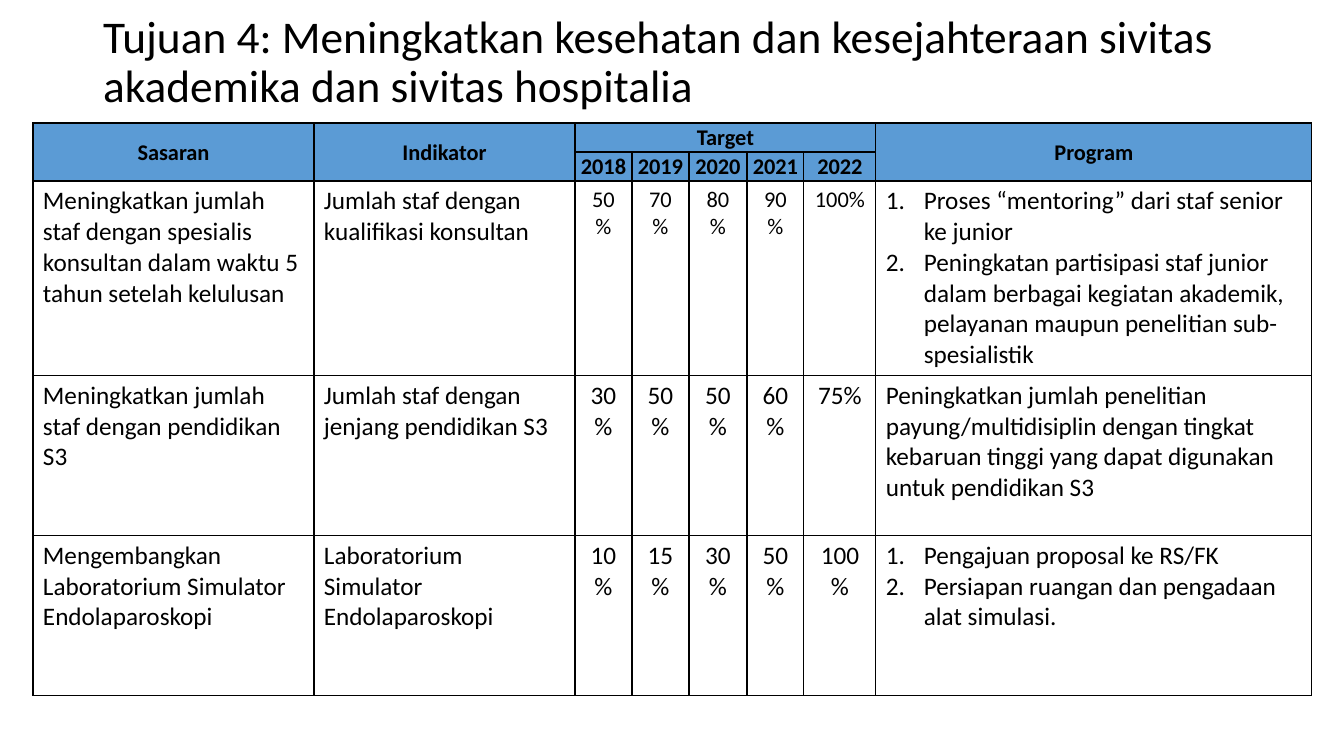
from dataclasses import dataclass

from lxml import etree
from pptx import Presentation
from pptx.dml.color import RGBColor
from pptx.enum.text import MSO_ANCHOR, MSO_AUTO_SIZE, PP_ALIGN
from pptx.oxml.ns import qn
from pptx.util import Emu, Pt

LEFT, CENTER = PP_ALIGN.LEFT, PP_ALIGN.CENTER
TOP, MIDDLE = MSO_ANCHOR.TOP, MSO_ANCHOR.MIDDLE
NO_AUTOFIT = MSO_AUTO_SIZE.NONE

COLORS = {"text": "000000", "header": "5B9BD5", "border": "000000"}
FONT = "Calibri"
PX_PER_INCH = 100.8
LIST_INDENT = 38
COLUMNS = [281, 261, 57, 57, 58, 57, 72, 436]
ROWS = [29, 29, 194, 160, 160]
YEARS = ["2018", "2019", "2020", "2021", "2022"]
FIRST_YEAR, PROGRAM = 2, 7


@dataclass(frozen=True)
class Goal:
    target: str
    indicator: str
    values: list[str]
    programs: list[str]
    value_size: int = 18


@dataclass(frozen=True)
class Heading:
    text: str
    row: int
    column: int
    last_row: int
    last_column: int


@dataclass(frozen=True)
class CellStyle:
    size: int
    bold: bool
    align: PP_ALIGN
    anchor: MSO_ANCHOR
    margins: tuple[int, int, int, int]
    fill: str = ""


HEADER = CellStyle(16, True, CENTER, MIDDLE, (1, 1, 1, 0), "header")
BODY_MARGINS = (10, 5, 10, 5)
BODY = CellStyle(18, False, LEFT, TOP, BODY_MARGINS)

HEADINGS = [
    Heading("Sasaran", 0, 0, 1, 0),
    Heading("Indikator", 0, 1, 1, 1),
    Heading("Target", 0, FIRST_YEAR, 0, PROGRAM - 1),
    Heading("Program", 0, PROGRAM, 1, PROGRAM),
] + [Heading(year, 1, column, 1, column) for column, year in enumerate(YEARS, FIRST_YEAR)]

GOALS = [
    Goal(
        "Meningkatkan jumlah staf dengan spesialis konsultan dalam waktu 5 tahun setelah kelulusan",
        "Jumlah staf dengan kualifikasi konsultan",
        ["50%", "70%", "80%", "90%", "100%"],
        [
            "Proses “mentoring” dari staf senior ke junior",
            "Peningkatan partisipasi staf junior dalam berbagai kegiatan akademik, "
            "pelayanan maupun penelitian sub-spesialistik",
        ],
        16,
    ),
    Goal(
        "Meningkatkan jumlah staf dengan pendidikan S3",
        "Jumlah staf dengan jenjang pendidikan S3",
        ["30%", "50%", "50%", "60%", "75%"],
        [
            "Peningkatkan jumlah penelitian payung/multidisiplin dengan tingkat "
            "kebaruan tinggi yang dapat digunakan untuk pendidikan S3"
        ],
    ),
    Goal(
        "Mengembangkan Laboratorium Simulator Endolaparoskopi",
        "Laboratorium Simulator Endolaparoskopi",
        ["10 %", "15%", "30%", "50%", "100%"],
        ["Pengajuan proposal ke RS/FK", "Persiapan ruangan dan pengadaan alat simulasi."],
    ),
]


def px(length: int) -> Emu:
    return Emu(round(length * 914400 / PX_PER_INCH))


def apply(target, values: dict) -> None:
    for name, value in values.items():
        setattr(target, name, value)


def write(para, text: str, size: float, bold: bool, align: PP_ALIGN) -> None:
    para.alignment = align
    span = para.add_run()
    span.text = text
    apply(span.font, {"name": FONT, "size": Pt(size), "bold": bold})
    span.font.color.rgb = RGBColor.from_string(COLORS["text"])


def number(para) -> None:
    properties = para._p.get_or_add_pPr()
    properties.set("marL", str(px(LIST_INDENT)))
    properties.set("indent", str(-px(LIST_INDENT)))
    etree.SubElement(properties, qn("a:buFont"), typeface="+mj-lt")
    etree.SubElement(properties, qn("a:buAutoNum"), type="arabicPeriod")


def add_borders(cell) -> None:
    properties = cell._tc.get_or_add_tcPr()
    for side in ("lnL", "lnR", "lnT", "lnB"):
        line = etree.SubElement(properties, qn(f"a:{side}"), w=str(Pt(1)))
        fill = etree.SubElement(line, qn("a:solidFill"))
        etree.SubElement(fill, qn("a:srgbClr"), val=COLORS["border"])


def fill_cell(cell, lines: list[str], style: CellStyle) -> None:
    sides = ("margin_left", "margin_top", "margin_right", "margin_bottom")
    apply(cell, dict(zip(sides, map(px, style.margins))))
    cell.vertical_anchor = style.anchor
    if style.fill:
        cell.fill.solid()
        cell.fill.fore_color.rgb = RGBColor.from_string(COLORS[style.fill])
    for index, text in enumerate(lines):
        para = cell.text_frame.add_paragraph() if index else cell.text_frame.paragraphs[0]
        if len(lines) > 1:
            number(para)
        write(para, text, style.size, style.bold, style.align)


def add_title(page, text: str) -> None:
    title = page.shapes.title
    apply(title, {"left": px(93), "top": px(27), "width": px(1159), "height": px(72)})
    apply(
        title.text_frame,
        {"auto_size": NO_AUTOFIT, "word_wrap": True, "vertical_anchor": MIDDLE},
    )
    para = title.text_frame.paragraphs[0]
    para.line_spacing = 0.9
    write(para, text, 32.4, False, LEFT)


def add_goal_table(page) -> None:
    frame = page.shapes.add_table(
        len(ROWS), len(COLUMNS), px(33), px(123), px(sum(COLUMNS)), px(sum(ROWS))
    )
    table = frame.table
    apply(table, {"first_row": False, "horz_banding": False})
    for column, width in zip(table.columns, COLUMNS):
        column.width = px(width)
    for row, height in zip(table.rows, ROWS):
        row.height = px(height)
    for cell in table.iter_cells():
        add_borders(cell)
        cell.fill.background()
    for heading in HEADINGS:
        cell = table.cell(heading.row, heading.column)
        last = table.cell(heading.last_row, heading.last_column)
        if (heading.row, heading.column) != (heading.last_row, heading.last_column):
            cell.merge(last)
        fill_cell(cell, [heading.text], HEADER)
    for row, goal in enumerate(GOALS, 2):
        value_style = CellStyle(goal.value_size, False, CENTER, TOP, BODY_MARGINS)
        fill_cell(table.cell(row, 0), [goal.target], BODY)
        fill_cell(table.cell(row, 1), [goal.indicator], BODY)
        for column, value in enumerate(goal.values, FIRST_YEAR):
            fill_cell(table.cell(row, column), [value], value_style)
        fill_cell(table.cell(row, PROGRAM), goal.programs, BODY)


def main() -> None:
    deck = Presentation()
    apply(deck, {"slide_width": px(1344), "slide_height": px(756)})
    page = deck.slides.add_slide(deck.slide_layouts.get_by_name("Title Only"))
    add_title(
        page,
        "Tujuan 4: Meningkatkan kesehatan dan kesejahteraan sivitas "
        "akademika dan sivitas hospitalia",
    )
    add_goal_table(page)
    deck.save("out.pptx")


if __name__ == "__main__":
    main()
